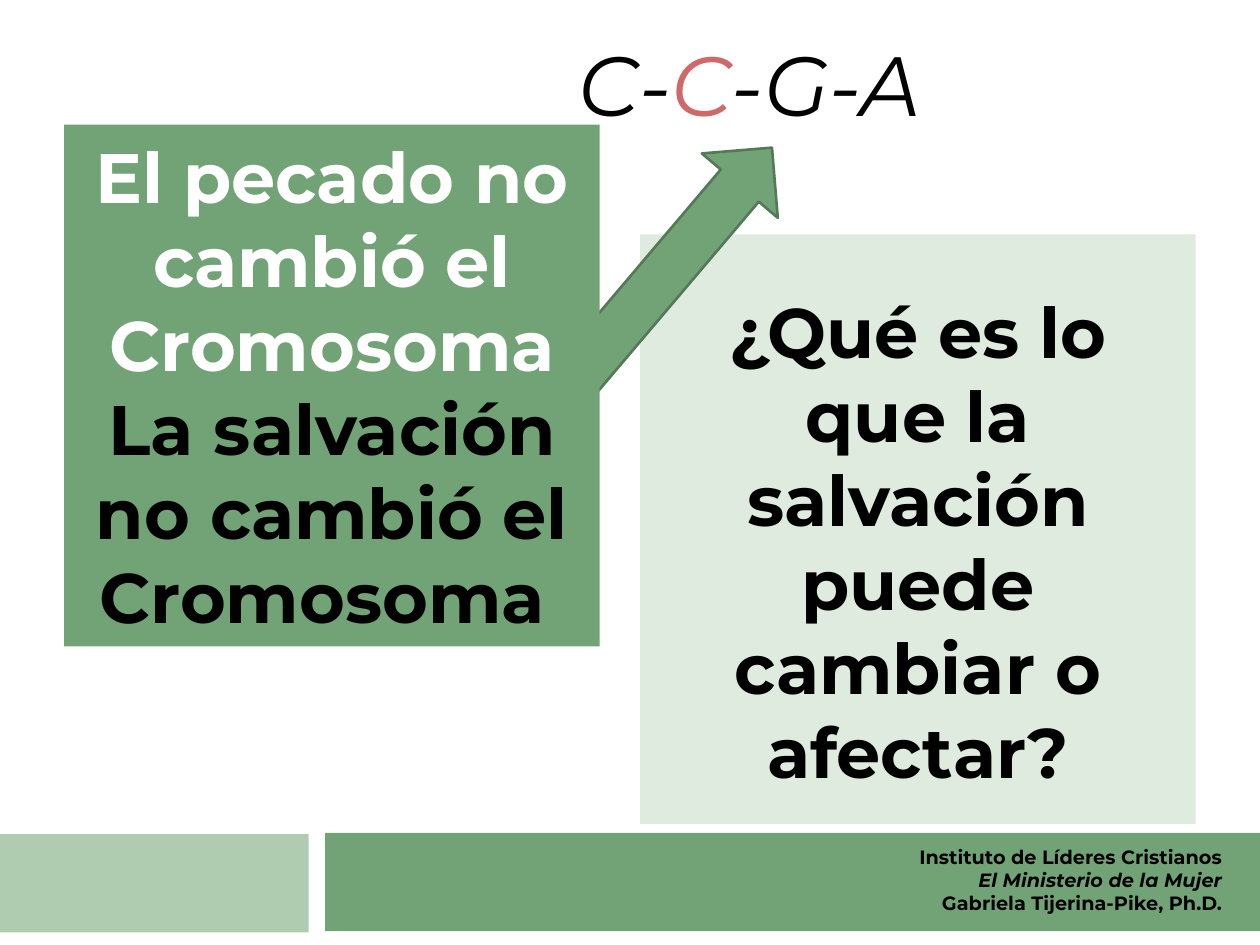
from dataclasses import dataclass

from pptx import Presentation
from pptx.dml.color import RGBColor
from pptx.enum.shapes import MSO_SHAPE
from pptx.enum.text import MSO_ANCHOR, MSO_AUTO_SIZE, PP_ALIGN
from pptx.util import Inches, Pt

RECTANGLE = MSO_SHAPE.RECTANGLE
RIGHT_ARROW = MSO_SHAPE.RIGHT_ARROW
CENTER, RIGHT = PP_ALIGN.CENTER, PP_ALIGN.RIGHT
TOP, MIDDLE = MSO_ANCHOR.TOP, MSO_ANCHOR.MIDDLE
NO_AUTOFIT = MSO_AUTO_SIZE.NONE


@dataclass(frozen=True)
class Theme:
    font: str = "Montserrat"
    green: str = "72A376"
    soft_green: str = "B0CCB0"
    pale_green: str = "DFEBDF"
    dark_green: str = "547957"
    red: str = "CF6868"
    black: str = "000000"
    white: str = "FFFFFF"
    title_size: int = 48
    statement_size: int = 40
    footer_size: int = 11
    arrow_line: float = 1.5


class SlideBuilder:
    def __init__(self, page, theme):
        self.page = page
        self.theme = theme

    def shape(self, kind, left, top, width, height, fill, line=None):
        box = self.page.shapes.add_shape(
            kind, Inches(left), Inches(top), Inches(width), Inches(height))
        box.shadow.inherit = False
        box.fill.solid()
        box.fill.fore_color.rgb = RGBColor.from_string(fill)
        if line:
            box.line.color.rgb = RGBColor.from_string(line)
            box.line.width = Pt(self.theme.arrow_line)
        else:
            box.line.fill.background()
        return box

    def format_span(self, span, size, color, bold=False, italic=False):
        font = span.font
        font.name = self.theme.font
        font.size = Pt(size)
        font.color.rgb = RGBColor.from_string(color)
        font.bold = bold
        font.italic = italic

    def format_frame(self, frame, anchor):
        frame.word_wrap = True
        frame.auto_size = NO_AUTOFIT
        frame.vertical_anchor = anchor
        frame.margin_left = frame.margin_right = Inches(0.1)
        frame.margin_top = frame.margin_bottom = Inches(0.05)

    def title(self, left, top, width, height, colored_parts):
        box = self.page.shapes.title
        box.left, box.top = Inches(left), Inches(top)
        box.width, box.height = Inches(width), Inches(height)
        self.format_frame(box.text_frame, TOP)
        para = box.text_frame.paragraphs[0]
        para.alignment = CENTER
        for text, color in colored_parts:
            span = para.add_run()
            span.text = text
            self.format_span(span, self.theme.title_size, color, italic=True)

    def paragraphs(self, box, lines, size, align, anchor):
        """Fill a box with bold paragraphs given as (text, color, italic)."""
        frame = box.text_frame
        self.format_frame(frame, anchor)
        frame.text = "\n".join(text for text, _, _ in lines)
        for para, (_, color, italic) in zip(frame.paragraphs, lines):
            para.alignment = align
            self.format_span(para.runs[0], size, color, bold=True, italic=italic)

    def panel(self, left, top, width, height, fill, lines, anchor=MIDDLE):
        box = self.shape(RECTANGLE, left, top, width, height, fill)
        self.paragraphs(box, lines, self.theme.statement_size, CENTER, anchor)
        return box

    def arrow(self, left, top, width, height, rotation):
        arrow = self.shape(RIGHT_ARROW, left, top, width, height,
                           self.theme.green, self.theme.dark_green)
        arrow.rotation = rotation

    def footer(self, left, top, width, height, lines):
        box = self.page.shapes.add_textbox(
            Inches(left), Inches(top), Inches(width), Inches(height))
        self.paragraphs(box, lines, self.theme.footer_size, RIGHT, TOP)


def main():
    deck = Presentation()
    deck.slide_width, deck.slide_height = Inches(10), Inches(7.5)
    title_only = deck.slide_layouts[5]
    theme = Theme()
    slide = SlideBuilder(deck.slides.add_slide(title_only), theme)

    slide.shape(RECTANGLE, 0, 6.62, 2.45, 0.78, theme.soft_green)
    slide.shape(RECTANGLE, 2.58, 6.61, 7.42, 0.78, theme.green)

    question = slide.panel(5.08, 1.86, 4.41, 4.68, theme.pale_green, [
        ("¿Qué es lo que la salvación puede cambiar o afectar?", theme.black, False),
    ], anchor=TOP)
    frame = question.text_frame
    frame.margin_top = Inches(0.43)
    frame.margin_left = frame.margin_right = Inches(0.2)

    slide.footer(1.61, 6.66, 8.19, 0.66, [
        ("Instituto de Líderes Cristianos", theme.black, False),
        ("El Ministerio de la Mujer", theme.black, True),
        ("Gabriela Tijerina-Pike, Ph.D.", theme.black, False),
    ])
    slide.title(2.2, 0.21, 7.5, 0.91, [
        ("C-", theme.black), ("C", theme.red), ("-G-A", theme.black),
    ])
    slide.arrow(3.27, 2.1, 3.47, 0.79, rotation=310.3)
    slide.panel(0.51, 0.99, 4.25, 4.14, theme.green, [
        ("El pecado no cambió el Cromosoma", theme.white, False),
        ("La salvación no cambió el Cromosoma ", theme.black, False),
    ])

    deck.save("out.pptx")


if __name__ == "__main__":
    main()
